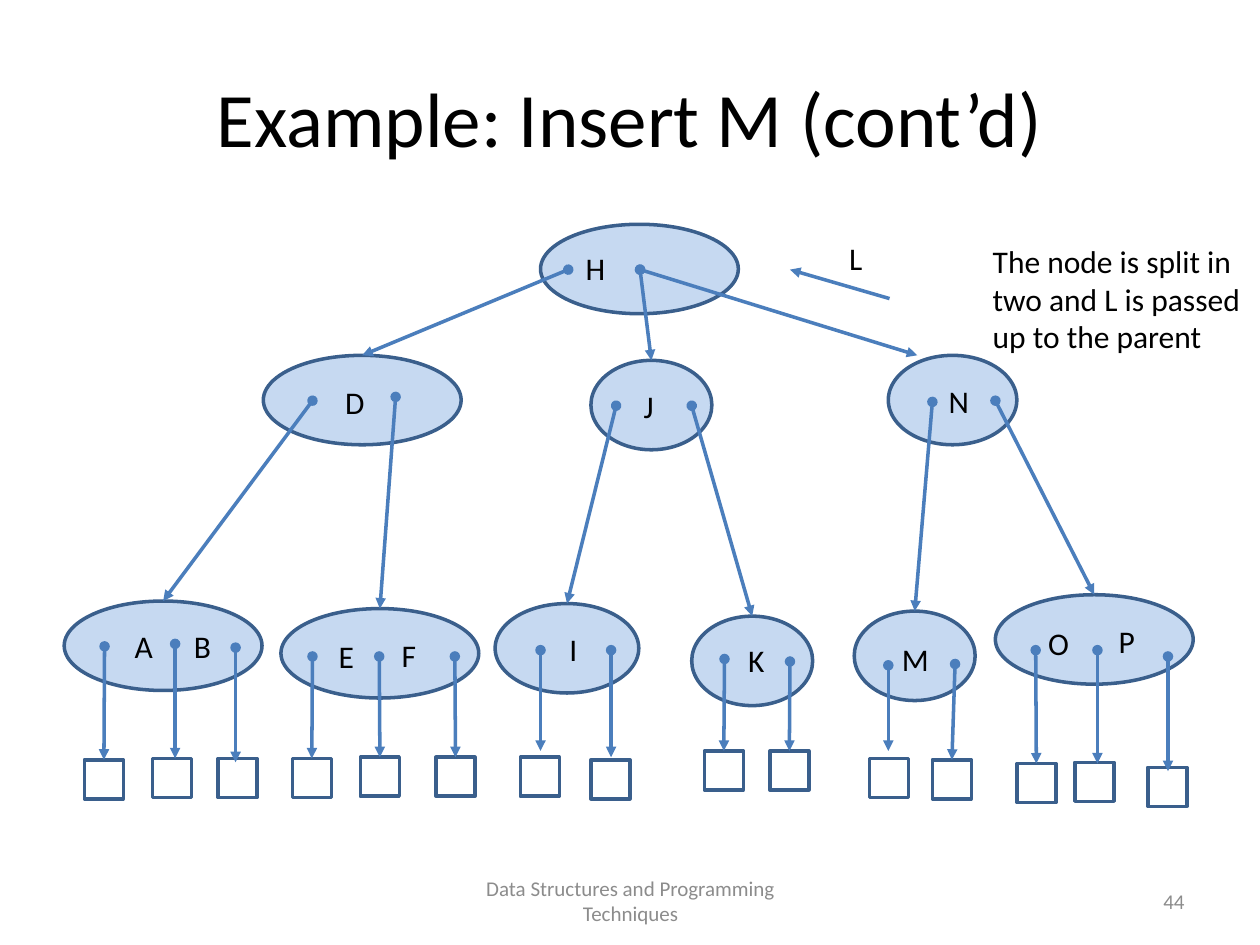
from pptx import Presentation
from pptx.dml.color import RGBColor
from pptx.enum.shapes import MSO_CONNECTOR as Connector, MSO_SHAPE as Shape
from pptx.enum.text import MSO_ANCHOR as Anchor, PP_ALIGN as Align
from pptx.oxml.ns import qn
from pptx.util import Pt
from lxml.etree import SubElement

PX = 9144  # 100 px to the inch
COLORS = {"text": "000000", "muted": "8C8C8C", "node": "C6D9F1",
          "outline": "3A5F8C", "arrow": "4B7EBC"}
NODE_HEIGHT, LEAF_SIZE = 71, 31
LABEL_SIZE = (47, 40)

# Tree nodes: left, top, width
NODES = {
    "root": (429, 178, 157),
    "D": (209, 282, 157), "J": (469, 286, 96), "N": (705, 282, 102),
    "AB": (51, 477, 157), "EF": (223, 483, 157), "I": (393, 479, 114),
    "K": (549, 489, 96), "M": (678, 485, 96), "OP": (790, 472, 157),
}

# Key labels: left, top
KEYS = {
    "H": (455, 193), "D": (264, 299), "J": (501, 302), "N": (743, 298),
    "A": (97, 493), "B": (144, 493), "E": (259, 501), "F": (309, 500),
    "I": (442, 495), "K": (584, 504), "M": (706, 503), "O": (822, 490),
    "P": (878, 489), "L": (664, 185),
}

# Child pointers: start point, child, free tip where it misses the top middle
BRANCHES = [
    ((451, 214), "D", None), ((508, 214), "J", None),
    ((508, 214), "N", (728, 282)),
    ((248, 318), "AB", None), ((314, 315), "EF", None),
    ((489, 322), "I", None), ((549, 322), "K", None),
    ((740, 319), "M", None), ((790, 318), "OP", None),
]

# Leaf pointers: start point, left top of the leaf, free tip as above
LEAVES = [
    ((83, 513), (67, 603), None), ((139, 511), (121, 602), (139, 602)),
    ((187, 514), (173, 602), (187, 605)),
    ((248, 521), (232, 602), None), ((301, 521), (286, 601), None),
    ((361, 521), (346, 601), None),
    ((429, 516), (413, 601), (429, 596)), ((485, 516), (469, 603), (485, 601)),
    ((575, 523), (559, 596), None), ((627, 525), (611, 596), None),
    ((705, 528), (690, 602), (705, 596)), ((758, 527), (740, 603), None),
    ((822, 516), (807, 606), None), ((871, 516), (853, 605), (871, 606)),
    ((927, 521), (911, 609), (927, 612)),
]


def color(name):
    return RGBColor.from_string(COLORS[name])


def emu(*lengths):
    return [length * PX for length in lengths]


def write(frame, text, size=18, ink="text", align=Align.LEFT, anchor=Anchor.TOP):
    """Fill a text frame, one paragraph for each line of the text."""
    frame.word_wrap = True
    frame.vertical_anchor = anchor
    for index, line in enumerate(text.split("\n")):
        para = frame.add_paragraph() if index else frame.paragraphs[0]
        para.alignment = align
        span = para.add_run()
        span.text = line
        span.font.name = "Calibri"
        span.font.size = Pt(size)
        span.font.color.rgb = color(ink)


class TreePage:
    """Draws the parts of a tree diagram on one slide."""

    line_width = Pt(2)

    def __init__(self, page):
        self.page = page

    def text(self, left, top, width, height, text, **style):
        box = self.page.shapes.add_textbox(*emu(left, top, width, height))
        write(box.text_frame, text, **style)

    def shape(self, kind, left, top, width, height, fill=None):
        shape = self.page.shapes.add_shape(kind, *emu(left, top, width, height))
        shape.shadow.inherit = False
        if fill:
            shape.fill.solid()
            shape.fill.fore_color.rgb = color(fill)
        else:
            shape.fill.background()
        shape.line.color.rgb = color("outline")
        shape.line.width = self.line_width
        return shape

    def node(self, left, top, width):
        return self.shape(Shape.OVAL, left, top, width, NODE_HEIGHT, "node")

    def leaf(self, left, top):
        return self.shape(Shape.RECTANGLE, left, top, LEAF_SIZE, LEAF_SIZE)

    def arrow(self, start, tip=None, target=None, dot=True):
        """Point at a free tip, or join the top middle of the target."""
        arrow = self.page.shapes.add_connector(
            Connector.STRAIGHT, *emu(*start, *(tip or start)))
        if tip is None:
            arrow.end_connect(target, 0)
        arrow.line.color.rgb = color("arrow")
        arrow.line.width = self.line_width
        line = arrow.line._get_or_add_ln()
        if dot:
            SubElement(line, qn("a:headEnd"), type="oval")
        SubElement(line, qn("a:tailEnd"), type="triangle")
        SubElement(arrow._element.spPr, qn("a:effectLst"))


def main():
    deck = Presentation()
    deck.slide_width, deck.slide_height = emu(1000, 750)
    tree = TreePage(deck.slides.add_slide(deck.slide_layouts[6]))

    # Title
    tree.text(50, 30, 900, 125, "Example: Insert M (cont’d)", size=44,
              align=Align.CENTER, anchor=Anchor.MIDDLE)

    # Nodes and their child pointers
    nodes = {name: tree.node(*place) for name, place in NODES.items()}
    for start, child, tip in BRANCHES:
        tree.arrow(start, tip, nodes[child])

    # Leaves
    for start, place, tip in LEAVES:
        tree.arrow(start, tip, tree.leaf(*place))

    # Keys
    for key, place in KEYS.items():
        tree.text(*place, *LABEL_SIZE, key)

    # Key passed up to the parent
    tree.arrow((706, 237), (627, 214), dot=False)
    tree.text(778, 187, 222, 101,
              "The node is split in two and L is passed\nup to the parent")

    # Footer
    footer = {"size": 12, "ink": "muted", "anchor": Anchor.MIDDLE}
    tree.text(342, 695, 317, 40, "Data Structures and Programming Techniques",
              align=Align.CENTER, **footer)
    tree.text(717, 695, 233, 40, "44", align=Align.RIGHT, **footer)

    deck.save("out.pptx")


if __name__ == "__main__":
    main()
